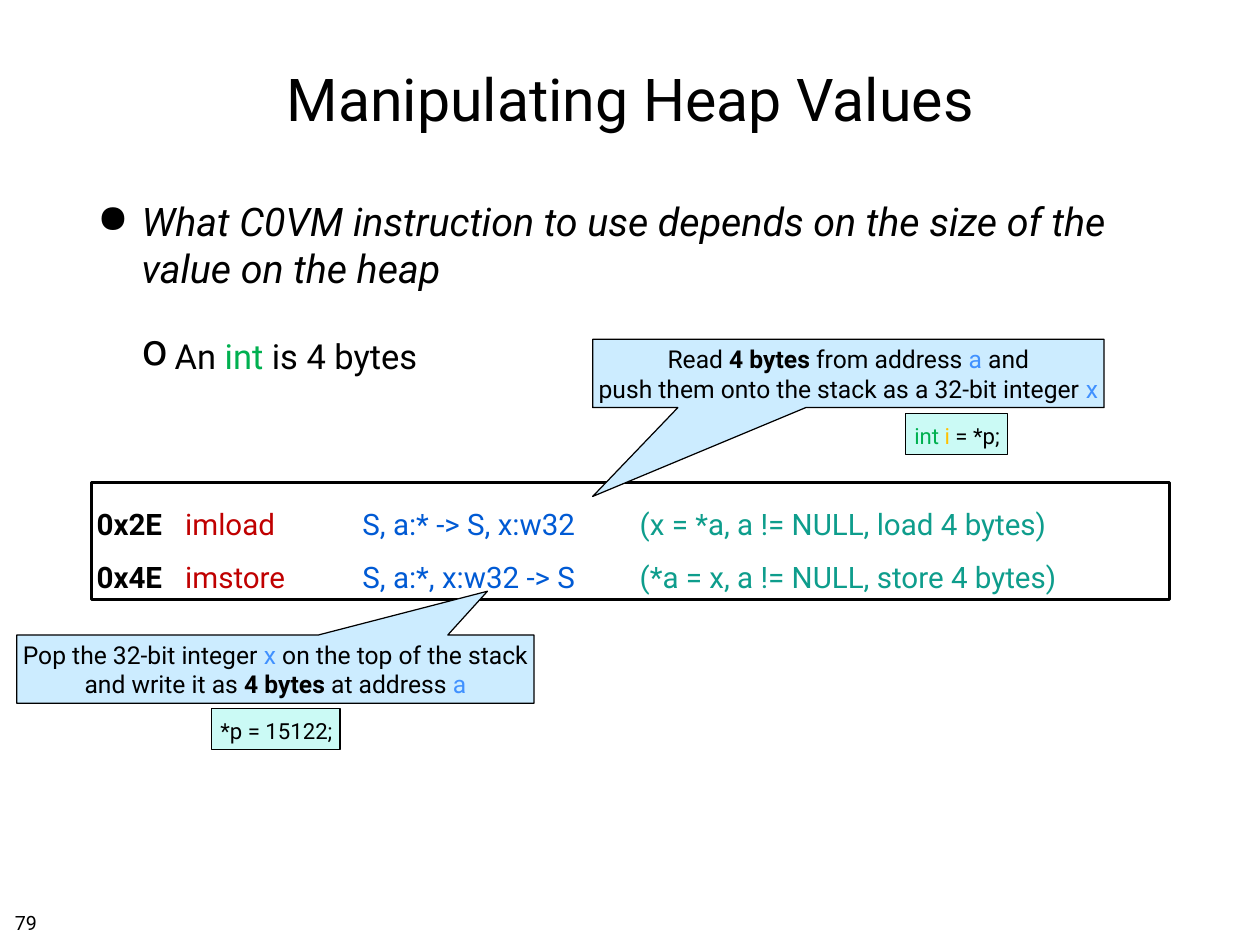
"""Build the slide on manipulating heap values in the C0VM."""
from dataclasses import dataclass

from lxml.etree import SubElement
from pptx import Presentation
from pptx.dml.color import RGBColor
from pptx.enum.shapes import MSO_SHAPE
from pptx.enum.text import MSO_ANCHOR, MSO_AUTO_SIZE, PP_ALIGN
from pptx.oxml.ns import qn
from pptx.util import Cm, Pt


@dataclass(frozen=True)
class Theme:
    font: str = "Roboto"
    black: str = "000000"
    white: str = "FFFFFF"
    type_green: str = "00B050"
    name_gold: str = "FFC000"
    opcode_red: str = "C00000"
    stack_blue: str = "005AD4"
    effect_teal: str = "0E9D8C"
    operand_blue: str = "4091FF"
    callout_fill: str = "CCECFF"
    snippet_fill: str = "CBFAF5"
    title_size: int = 48
    point_size: int = 32
    subpoint_size: int = 28
    instruction_size: int = 24
    callout_size: int = 20
    snippet_size: int = 18
    number_size: int = 16


THEME = Theme()


@dataclass(frozen=True)
class Span:
    text: str
    color: str = THEME.black
    bold: bool = False
    italic: bool = False


@dataclass(frozen=True)
class Frame:
    left: float
    top: float
    width: float
    height: float


@dataclass(frozen=True)
class Panel:
    frame: Frame
    lines: tuple
    size: int
    fill: str
    preset: MSO_SHAPE = MSO_SHAPE.RECTANGLE
    adjustments: tuple = ()
    insets: tuple = (0.15, 0.15, 0.15, 0.15)
    line_width: int = 1
    align: PP_ALIGN = PP_ALIGN.LEFT
    anchor: MSO_ANCHOR = MSO_ANCHOR.MIDDLE
    wrap: bool = False
    line_spacing: float = 1.0
    tabs: tuple = ()


@dataclass(frozen=True)
class Bullet:
    char: str
    spans: tuple
    size: int
    level: int
    margin: float
    hanging: float
    space_before: int
    scale: int = 100


def instruction(code: str, name: str, stack: str, effect: str) -> tuple:
    """Return the coloured, tab-separated spans of one instruction."""
    return (Span(f"{code}\t", bold=True), Span(f"{name}\t", THEME.opcode_red),
            Span(f"{stack}\t", THEME.stack_blue), Span(effect, THEME.effect_teal))


def callout(frame: Frame, tip: tuple, lines: tuple) -> Panel:
    """Return a callout whose tip is given relative to its size."""
    return Panel(frame, lines, THEME.callout_size, THEME.callout_fill,
                 MSO_SHAPE.RECTANGULAR_CALLOUT, tip, (0.13,) * 4, align=PP_ALIGN.CENTER)


def snippet(frame: Frame, *spans: Span) -> Panel:
    """Return a small box holding a line of source code."""
    return Panel(frame, (spans,), THEME.snippet_size, THEME.snippet_fill,
                 insets=(0.25, 0.25, 0.15, 0.15), anchor=MSO_ANCHOR.TOP)


OPERAND_A = Span("a", THEME.operand_blue)
OPERAND_X = Span("x", THEME.operand_blue)
FOUR_BYTES = Span("4 bytes ", bold=True)

BULLETS = (
    Bullet("●", (Span("What C0VM instruction to use depends on the size of the "
                      "value on the heap", italic=True),),
           THEME.point_size, 0, 1.27, 1.27, 8),
    Bullet("o", (Span("An "), Span("int", THEME.type_green), Span(" is 4 bytes")),
           THEME.subpoint_size, 1, 2.22, 0.95, 35, 125),
)

PANELS = (
    Panel(Frame(2.62, 13.84, 30.91, 3.35), (
        instruction("0x2E", "imload", "S, a:* -> S, x:w32",
                    "(x = *a, a != NULL, load 4 bytes)"),
        instruction("0x4E", "imstore", "S, a:*, x:w32 -> S",
                    "(*a = x, a != NULL, store 4 bytes)"),
    ), THEME.instruction_size, THEME.white, line_width=2, wrap=True,
        line_spacing=1.5, tabs=(2.54, 7.62, 15.57)),
    callout(Frame(16.99, 9.73, 14.66, 1.96), (-0.5, 1.8), (
        (Span("Read "), FOUR_BYTES, Span("from address "), OPERAND_A, Span(" and")),
        (Span("push them onto the stack as a 32-bit integer "), OPERAND_X))),
    callout(Frame(0.48, 18.21, 14.83, 1.96), (0.41, -1.14), (
        (Span("Pop the 32-bit integer "), OPERAND_X, Span(" on the top of the stack")),
        (Span("and write it as "), FOUR_BYTES, Span("at address "), OPERAND_A))),
    snippet(Frame(6.07, 20.32, 3.68, 1.17), Span("*p = 15122;")),
    snippet(Frame(25.96, 11.86, 2.92, 1.17), Span("int ", THEME.type_green),
            Span("i", THEME.name_gold), Span(" = *p;")),
)


def bounds(frame: Frame) -> tuple:
    """Convert a frame in centimetres to slide lengths."""
    return Cm(frame.left), Cm(frame.top), Cm(frame.width), Cm(frame.height)


def add_text(para, text: str, *, size: int, color: str = THEME.black,
             bold: bool = False, italic: bool = False) -> None:
    """Append a formatted run to a paragraph."""
    run = para.add_run()
    run.text = text
    font = run.font
    font.name, font.size, font.bold, font.italic = THEME.font, Pt(size), bold, italic
    font.color.rgb = RGBColor.from_string(color)


def add_spans(para, spans: tuple, size: int) -> None:
    """Append several spans of one size."""
    for span in spans:
        add_text(para, span.text, size=size, color=span.color,
                 bold=span.bold, italic=span.italic)


def set_up_text(box, insets: tuple = (0.15,) * 4, *, wrap: bool = True,
                anchor: MSO_ANCHOR = MSO_ANCHOR.TOP,
                auto_size: MSO_AUTO_SIZE = MSO_AUTO_SIZE.NONE):
    """Set insets, wrapping, anchor and sizing, and return the text frame."""
    text = box.text_frame
    text.margin_left, text.margin_top, text.margin_right, text.margin_bottom = map(Cm, insets)
    text.word_wrap, text.vertical_anchor, text.auto_size = wrap, anchor, auto_size
    return text


def add_title(page, title: str) -> None:
    """Place and fill the title placeholder."""
    box = page.shapes.title
    box.left, box.top, box.width, box.height = bounds(Frame(2.64, 0.71, 30.86, 4.17))
    para = set_up_text(box, anchor=MSO_ANCHOR.MIDDLE).paragraphs[0]
    para.alignment = PP_ALIGN.CENTER
    add_text(para, title, size=THEME.title_size)


def add_bullets(page, frame: Frame, bullets: tuple) -> None:
    """Add a text box of bulleted paragraphs."""
    text = set_up_text(page.shapes.add_textbox(*bounds(frame)))
    for index, bullet in enumerate(bullets):
        para = text.add_paragraph() if index else text.paragraphs[0]
        para.level, para.space_before = bullet.level, Pt(bullet.space_before)
        add_spans(para, bullet.spans, bullet.size)
        properties = para._p.get_or_add_pPr()
        properties.set("marL", str(Cm(bullet.margin)))
        properties.set("indent", str(-Cm(bullet.hanging)))
        color = SubElement(properties, qn("a:buClr"))
        SubElement(color, qn("a:srgbClr"), val=THEME.black)
        SubElement(properties, qn("a:buSzPct"), val=str(bullet.scale * 1000))
        SubElement(properties, qn("a:buChar"), char=bullet.char)


def add_panel(page, panel: Panel) -> None:
    """Add a filled, outlined shape with its text."""
    box = page.shapes.add_shape(panel.preset, *bounds(panel.frame))
    box.shadow.inherit = False
    for index, value in enumerate(panel.adjustments):
        box.adjustments[index] = value
    box.fill.solid()
    box.fill.fore_color.rgb = RGBColor.from_string(panel.fill)
    box.line.color.rgb = RGBColor.from_string(THEME.black)
    box.line.width = Pt(panel.line_width)
    text = set_up_text(box, panel.insets, wrap=panel.wrap, anchor=panel.anchor,
                       auto_size=MSO_AUTO_SIZE.SHAPE_TO_FIT_TEXT)
    for index, spans in enumerate(panel.lines):
        para = text.add_paragraph() if index else text.paragraphs[0]
        para.alignment, para.line_spacing = panel.align, panel.line_spacing
        add_spans(para, spans, panel.size)
        if panel.tabs:
            stops = SubElement(para._p.get_or_add_pPr(), qn("a:tabLst"))
            for stop in panel.tabs:
                SubElement(stops, qn("a:tab"), pos=str(Cm(stop)), algn="l")


def main() -> None:
    """Build and save the deck."""
    deck = Presentation()
    deck.slide_width, deck.slide_height = Cm(36.12), Cm(27.1)
    page = deck.slides.add_slide(deck.slide_layouts[5])
    add_title(page, "Manipulating Heap Values")
    add_bullets(page, Frame(2.64, 5.51, 30.84, 19.15), BULLETS)
    for panel in PANELS:
        add_panel(page, panel)
    number = page.shapes.add_textbox(*bounds(Frame(0.28, 25.98, 0.94, 0.89)))
    add_text(set_up_text(number, wrap=False).paragraphs[0], "79", size=THEME.number_size)
    deck.save("out.pptx")


if __name__ == "__main__":
    main()
